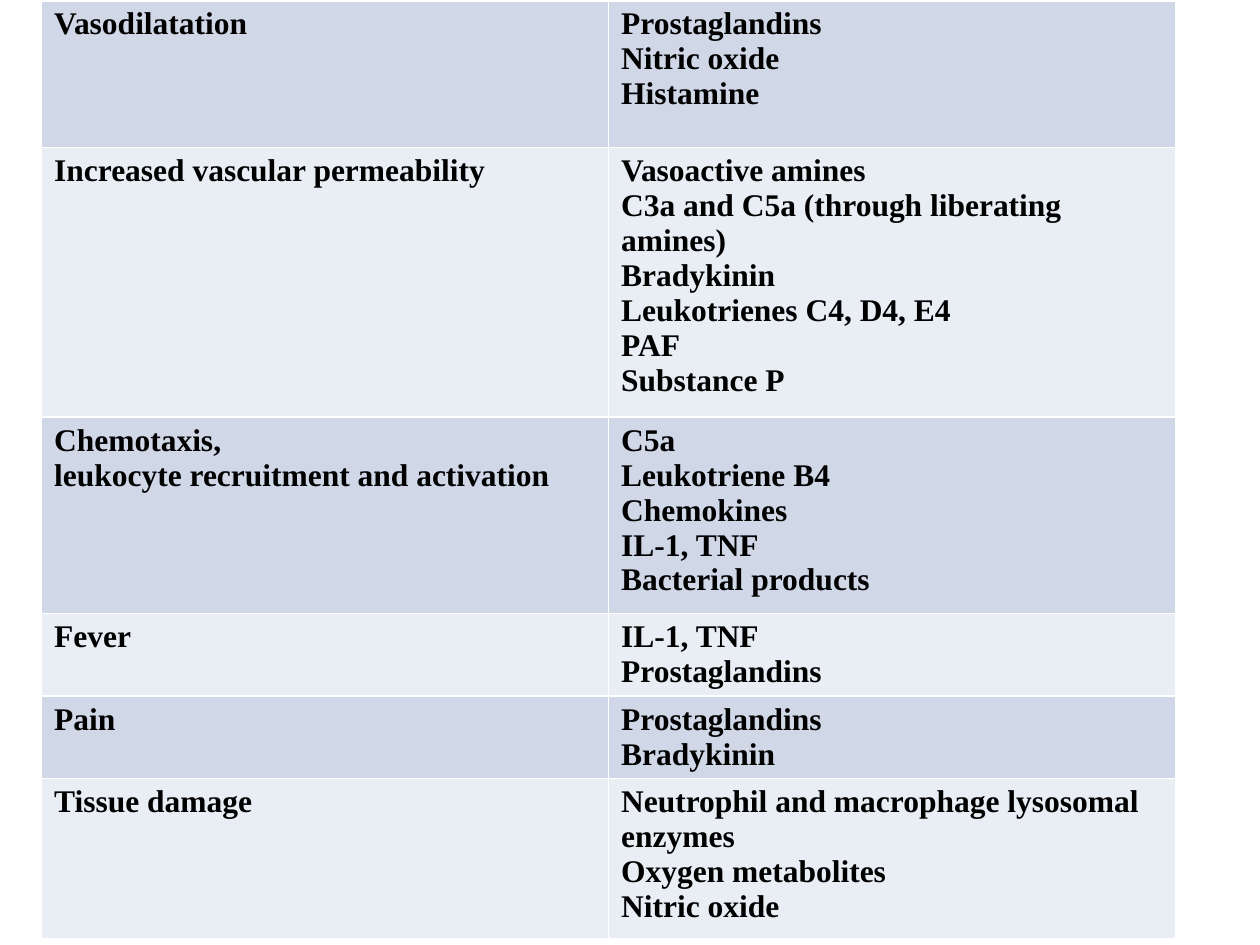
from lxml import etree
from pptx import Presentation
from pptx.dml.color import RGBColor
from pptx.oxml.ns import qn
from pptx.util import Inches, Pt

BLANK_LAYOUT = 6
BORDER_TAGS = ("a:lnL", "a:lnR", "a:lnT", "a:lnB")

# Empty header row, then each effect of inflammation with its mediators
ROWS = [
    ("", ""),
    ("Vasodilatation", "Prostaglandins\nNitric oxide\nHistamine"),
    ("Increased vascular permeability",
     "Vasoactive amines\nC3a and C5a (through liberating amines)\nBradykinin\n"
     "Leukotrienes C4, D4, E4\nPAF\nSubstance P"),
    ("Chemotaxis,\nleukocyte recruitment and activation",
     "C5a\nLeukotriene B4\nChemokines\nIL-1, TNF\nBacterial products"),
    ("Fever", "IL-1, TNF\nProstaglandins"),
    ("Pain", "Prostaglandins\nBradykinin"),
    ("Tissue damage",
     "Neutrophil and macrophage lysosomal enzymes\nOxygen metabolites\nNitric oxide"),
]
ROW_HEIGHTS = [0.76, 1.17, 2.14, 1.56, 0.65, 0.65, 1.27]
COLUMN_WIDTHS = [4.5, 4.5]


def color(hex_string):
    return RGBColor.from_string(hex_string)


class SlideBuilder:
    font = "Times New Roman"
    size = 18
    text_color = "000000"
    border_color = "FFFFFF"
    border_width = 1
    header_rule = 3
    header_fill = "4F81BD"
    bands = ("E9EDF4", "D0D8E8")

    def __init__(self, slide):
        self.slide = slide

    def table(self, left, top, widths, heights, rows):
        frame = self.slide.shapes.add_table(
            len(rows), len(widths), Inches(left), Inches(top),
            Inches(sum(widths)), Inches(sum(heights)))
        table = frame.table
        for column, width in zip(table.columns, widths):
            column.width = Inches(width)
        for i, (texts, height) in enumerate(zip(rows, heights)):
            table.rows[i].height = Inches(height)
            fill = self.bands[i % 2] if i else self.header_fill
            top_width = self.header_rule if i == 1 else self.border_width
            bottom_width = self.border_width if i else self.header_rule
            for j, text in enumerate(texts):
                cell = table.cell(i, j)
                self.cell(cell, text, fill)
                self.borders(cell, top_width, bottom_width)

    def cell(self, cell, text, fill):
        cell.fill.solid()
        cell.fill.fore_color.rgb = color(fill)
        if not text:
            return
        cell.text_frame.text = text
        for p in cell.text_frame.paragraphs:
            for r in p.runs:
                r.font.name = self.font
                r.font.size = Pt(self.size)
                r.font.bold = True
                r.font.color.rgb = color(self.text_color)

    def borders(self, cell, top_width, bottom_width):
        # Border lines must come before the fill
        tc_pr = cell._tc.get_or_add_tcPr()
        widths = (self.border_width, self.border_width, top_width, bottom_width)
        for i, (tag, width) in enumerate(zip(BORDER_TAGS, widths)):
            line = etree.Element(qn(tag), w=str(Pt(width)))
            fill = etree.SubElement(line, qn("a:solidFill"))
            etree.SubElement(fill, qn("a:srgbClr"), val=self.border_color)
            tc_pr.insert(i, line)


def main():
    prs = Presentation()
    prs.slide_width = Inches(10)
    prs.slide_height = Inches(7.5)
    s = prs.slides.add_slide(prs.slide_layouts[BLANK_LAYOUT])

    # Table of effects and mediators, its header row above the slide's top edge
    SlideBuilder(s).table(0.33, -ROW_HEIGHTS[0], COLUMN_WIDTHS, ROW_HEIGHTS, ROWS)

    prs.save("out.pptx")


if __name__ == "__main__":
    main()
